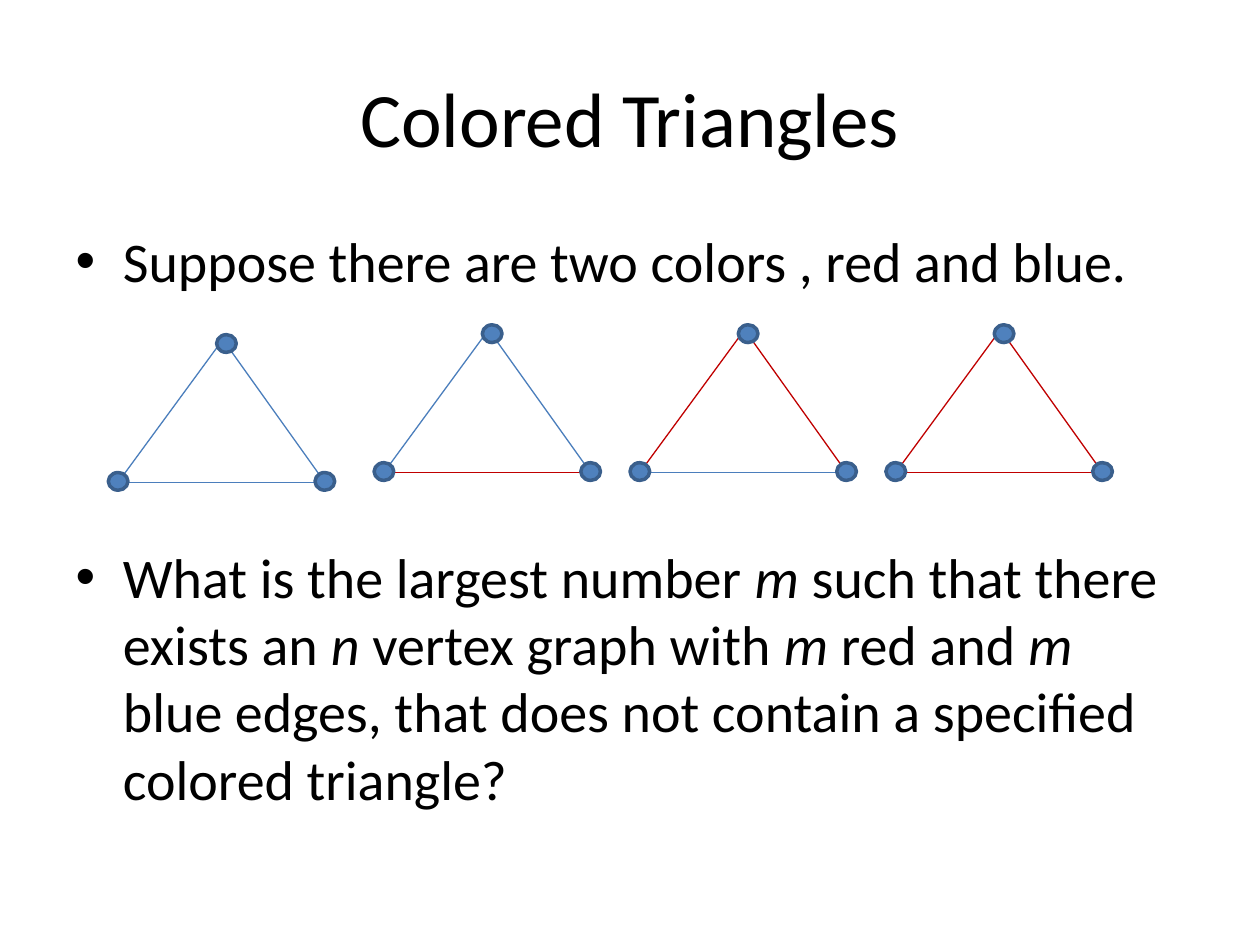
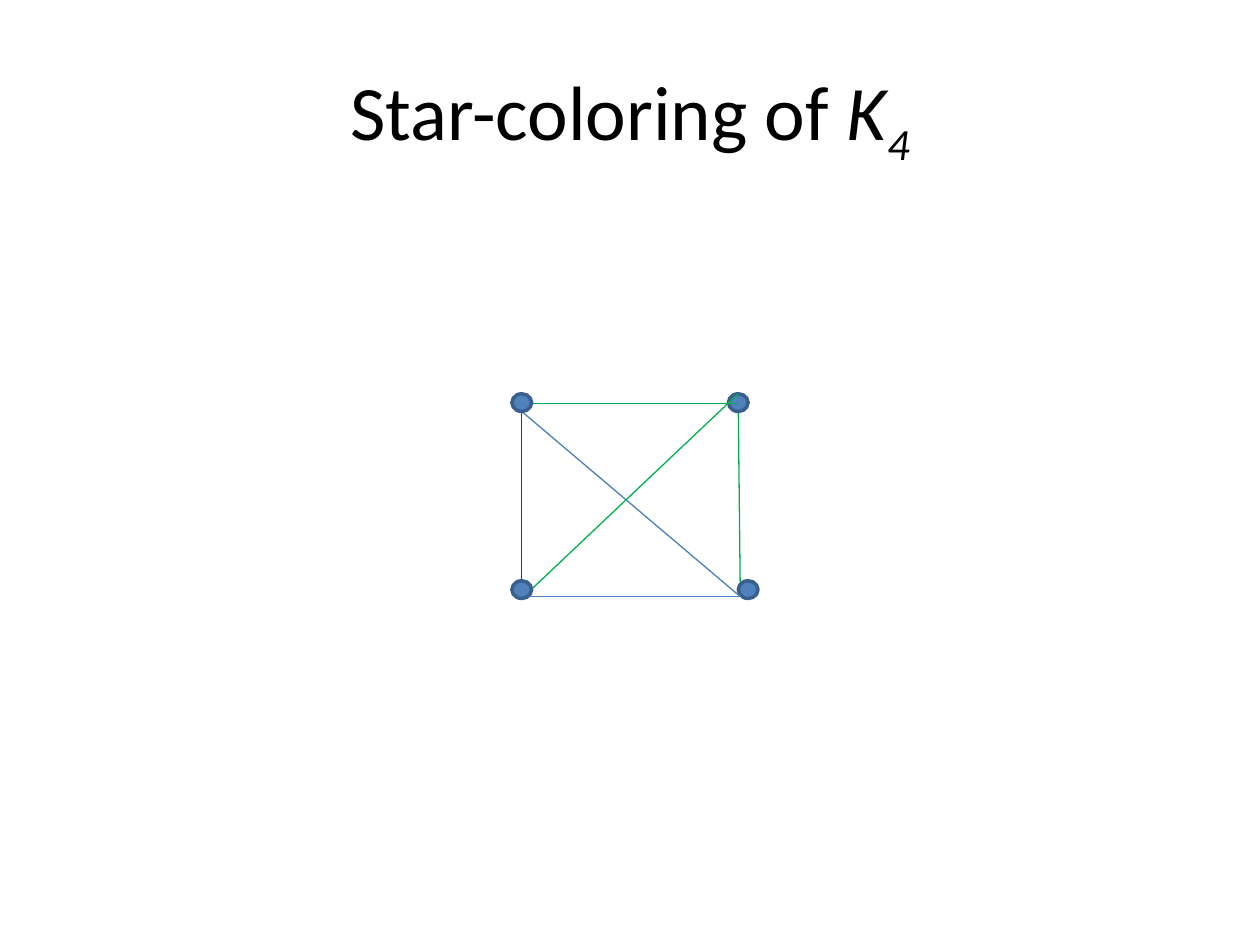
from lxml.etree import SubElement
from pptx import Presentation
from pptx.dml.color import RGBColor
from pptx.enum.shapes import MSO_CONNECTOR as Connector, MSO_SHAPE as Shape
from pptx.enum.text import MSO_ANCHOR as Anchor, MSO_AUTO_SIZE as AutoSize, PP_ALIGN as Align
from pptx.oxml.ns import qn
from pptx.util import Pt

COLORS = {
    "text": "000000",
    "dot": "4F81BD",
    "rim": "3A5F8C",
    "blue": "4B7EBC",
    "red": "C00000",
    "green": "00B050",
}
FONT = "Calibri"
GRID = 45 / 8
DOT_SIZE = (2, 1.8)

TITLE_BOX = (36, 21.6, 648, 90)
BODY_BOX = (36, 126, 648, 363.6)
FIGURE_GAP = 142

TRIANGLES_TITLE = [("Colored Triangles", "")]
STATEMENT = [("Suppose there are two colors , red and blue.", "")]
QUESTION = [
    ("What is the largest number ", ""),
    ("m", "italic"),
    (" such that there exists an ", ""),
    ("n", "italic"),
    (" vertex graph with ", ""),
    ("m", "italic"),
    (" red and ", ""),
    ("m", "italic"),
    (" blue edges, that does not contain a specified colored triangle?", ""),
]
STAR_TITLE = [("Star-coloring of ", ""), ("K", "italic"), ("4", "italic subscript")]

TRIANGLE_EDGES = [((1, 15), (12, 0)), ((12, 1), (22, 15)), ((0, 15), (21, 15))]
TRIANGLE_DOTS = [(11, 0), (21, 14), (0, 14)]
TRIANGLES = [
    ((11, 34), ("blue", "blue", "blue")),
    ((38, 33), ("blue", "blue", "red")),
    ((64, 33), ("red", "red", "blue")),
    ((90, 33), ("red", "red", "red")),
]

STAR_ORIGIN = (52, 40)
STAR_LAYERS = [
    (
        [("red", (1, 1), (1, 20.4)), ("green", (23, 1), (23.2, 19.8))],
        [(22, 0), (23, 19)],
    ),
    (
        [
            ("green", (1, 1), (23, 1)),
            ("blue", (1, 1.8), (23.2, 20.6)),
            ("blue", (0.4, 20.6), (23.2, 20.6)),
            ("green", (1, 20.8), (23, 0)),
        ],
        [(0, 0), (0, 19)],
    ),
]


def rgb(name):
    return RGBColor.from_string(COLORS[name])


def place(holder, box):
    holder.left, holder.top, holder.width, holder.height = map(Pt, box)
    holder.text_frame.auto_size = AutoSize.NONE
    holder.text_frame.word_wrap = True


def write(para, parts, size, align=None, before=None):
    if align is not None:
        para.alignment = align
    if before is not None:
        para.space_before = Pt(before)
    for text, style in parts:
        span = para.add_run()
        span.text = text
        span.font.name = FONT
        span.font.size = Pt(size)
        span.font.color.rgb = rgb("text")
        span.font.italic = "italic" in style
        if "subscript" in style:
            span.font._element.set("baseline", "-25000")


def add_page(deck, layout, title):
    page = deck.slides.add_slide(deck.slide_layouts[layout])
    holder = page.shapes.title
    place(holder, TITLE_BOX)
    holder.text_frame.vertical_anchor = Anchor.MIDDLE
    write(holder.text_frame.paragraphs[0], title, size=44, align=Align.CENTER)
    return page


def on_grid(origin, point):
    return [Pt((start + step) * GRID) for start, step in zip(origin, point)]


def add_edge(page, origin, color, start, end):
    edge = page.shapes.add_connector(
        Connector.STRAIGHT, *on_grid(origin, start), *on_grid(origin, end)
    )
    edge.line.color.rgb = rgb(color)
    edge.line.width = Pt(0.75)
    SubElement(edge._element.spPr, qn("a:effectLst"))


def add_dot(page, origin, corner):
    dot = page.shapes.add_shape(
        Shape.OVAL, *on_grid(origin, corner), *on_grid((0, 0), DOT_SIZE)
    )
    dot.shadow.inherit = False
    dot.fill.solid()
    dot.fill.fore_color.rgb = rgb("dot")
    dot.line.color.rgb = rgb("rim")
    dot.line.width = Pt(2)


def add_graph(page, origin, edges, dots):
    for edge in edges:
        add_edge(page, origin, *edge)
    for corner in dots:
        add_dot(page, origin, corner)


def build_triangles(deck):
    page = add_page(deck, 1, TRIANGLES_TITLE)
    body = page.placeholders[1]
    place(body, BODY_BOX)
    write(body.text_frame.paragraphs[0], STATEMENT, size=32)
    write(body.text_frame.add_paragraph(), QUESTION, size=32, before=FIGURE_GAP)
    for origin, colors in TRIANGLES:
        edges = [(color, *ends) for color, ends in zip(colors, TRIANGLE_EDGES)]
        add_graph(page, origin, edges, TRIANGLE_DOTS)


def build_star(deck):
    page = add_page(deck, 5, STAR_TITLE)
    for edges, dots in STAR_LAYERS:
        add_graph(page, STAR_ORIGIN, edges, dots)


def main():
    deck = Presentation()
    deck.slide_width, deck.slide_height = Pt(720), Pt(540)
    build_triangles(deck)
    build_star(deck)
    deck.save("out.pptx")


if __name__ == "__main__":
    main()
